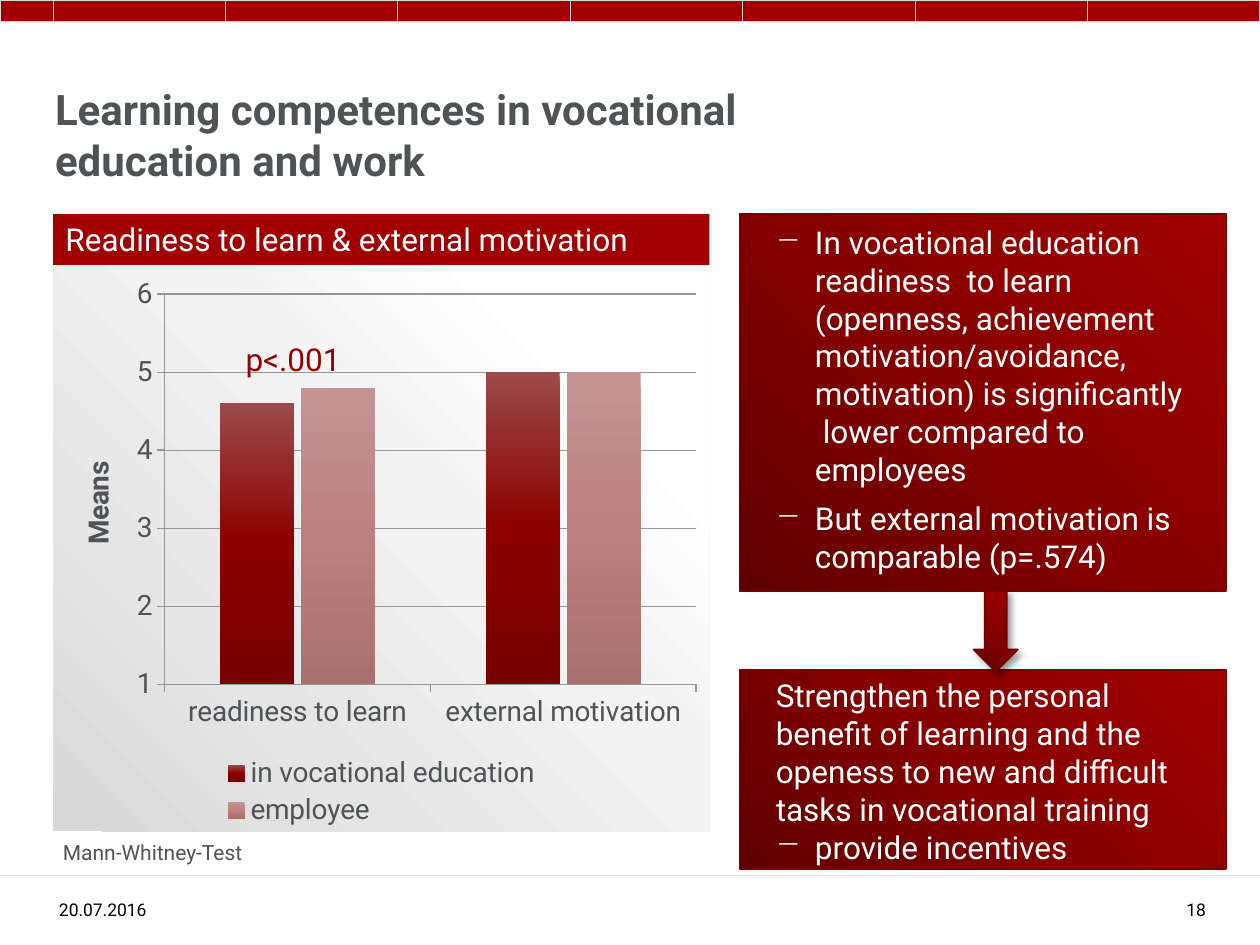
from dataclasses import dataclass

from lxml import etree
from pptx import Presentation
from pptx import util as u
from pptx.chart.data import CategoryChartData
from pptx.dml.color import RGBColor
from pptx.enum import chart as charts
from pptx.enum import shapes, text
from pptx.oxml import parse_xml
from pptx.oxml.ns import nsdecls, qn


@dataclass(frozen=True)
class Theme:
    font: str = "Roboto"
    red: str = "A00000"
    edge: str = "760000"
    accent: str = "960000"
    grey: str = "4F5355"
    white: str = "FFFFFF"
    black: str = "000000"
    separator: str = "D9D9D9"
    rule: str = "E3E4E5"
    grid: str = "969696"
    panel: tuple = ((0, "5F0000"), (50, "870000"), (100, "A00000"))
    plot: tuple = ((0, "D8D8D8"), (28, "E5E5E5"), (55, "F2F2F2"), (82, "FFFFFF"))
    bars: tuple = (
        ((0, "9C4A4A"), (50, "8C0000"), (100, "780000")),
        ((0, "C49494"), (50, "BC8080"), (100, "A87070")),
    )
    title: int = 24
    body: int = 18
    axis: int = 16
    note: int = 12
    footer: int = 10


def rgb(value):
    return RGBColor.from_string(value)


def add_gradient(properties, stops, angle):
    """Put a linear gradient into shape or chart properties."""
    marks = "".join(
        f'<a:gs pos="{pos * 1000}"><a:srgbClr val="{color}"/></a:gs>' for pos, color in stops
    )
    gradient = parse_xml(
        f'<a:gradFill {nsdecls("a")} rotWithShape="1"><a:gsLst>{marks}</a:gsLst>'
        f'<a:lin ang="{angle * 60000}" scaled="0"/></a:gradFill>'
    )
    geometry = properties.find(qn("a:prstGeom"))
    if geometry is None:
        properties.insert(0, gradient)
    else:
        geometry.addnext(gradient)


def add_layout(parent, inner=False, **box):
    """Place a chart part by fractions of the chart area."""
    for old in parent.findall(qn("c:layout")):
        parent.remove(old)
    parts = {"layoutTarget": "inner"} if inner else {}
    parts.update(xMode="edge", yMode="edge", **box)
    items = "".join(f'<c:{name} val="{value}"/>' for name, value in parts.items())
    return parse_xml(
        f'<c:layout {nsdecls("c")}><c:manualLayout>{items}</c:manualLayout></c:layout>'
    )


def write(paragraph, content, *, theme, size, color, bold=False, bullet=None, align=None):
    if bullet:
        properties = paragraph._p.get_or_add_pPr()
        properties.set("marL", str(u.Cm(0.79)))
        properties.set("indent", str(-u.Cm(0.79)))
        etree.SubElement(properties, qn("a:buChar")).set("char", bullet)
    if align is not None:
        paragraph.alignment = align
    run = paragraph.add_run()
    run.text = content
    font = run.font
    font.name, font.size, font.bold = theme.font, u.Pt(size), bold
    font.color.rgb = rgb(color)


class SlideBuilder:
    def __init__(self, slide, theme):
        self.slide, self.theme = slide, theme

    def box(self, place, *, kind=shapes.MSO_SHAPE.RECTANGLE, fill=None, line=None, width=1):
        shape = self.slide.shapes.add_shape(kind, *map(u.Cm, place))
        shape.shadow.inherit = False
        if fill:
            shape.fill.solid()
            shape.fill.fore_color.rgb = rgb(fill)
        else:
            add_gradient(shape._element.spPr, self.theme.panel, 315)
        if line:
            shape.line.color.rgb = rgb(line)
            shape.line.width = u.Pt(width)
        else:
            shape.line.fill.background()
        return shape

    def arrow(self, place):
        arrow = self.box(place, kind=shapes.MSO_SHAPE.DOWN_ARROW, line=self.theme.edge)
        effects = arrow._element.spPr.find(qn("a:effectLst"))
        effects.append(parse_xml(
            f'<a:outerShdw {nsdecls("a")} blurRad="{u.Pt(4)}" dist="{u.Pt(3)}" dir="2700000">'
            f'<a:srgbClr val="{self.theme.black}"><a:alpha val="40000"/></a:srgbClr>'
            '</a:outerShdw>'
        ))

    def rule(self, y, right):
        line = self.slide.shapes.add_connector(
            shapes.MSO_CONNECTOR.STRAIGHT, 0, u.Cm(y), u.Cm(right), u.Cm(y))
        line.line.color.rgb = rgb(self.theme.rule)
        line.line.width = u.Pt(0.5)
        etree.SubElement(line._element.spPr, qn("a:effectLst"))

    def text(self, place, *lines, anchor=text.MSO_ANCHOR.TOP, fill=None, **style):
        """Each line is a string, or a (string, bullet) pair."""
        holder = (self.box(place, fill=fill) if fill
                  else self.slide.shapes.add_textbox(*map(u.Cm, place)))
        frame = holder.text_frame
        frame.word_wrap = True
        frame.vertical_anchor = anchor
        style = {"align": text.PP_ALIGN.LEFT, **style}
        for index, line in enumerate(lines):
            content, bullet = (line, None) if isinstance(line, str) else line
            paragraph = frame.add_paragraph() if index else frame.paragraphs[0]
            write(paragraph, content, theme=self.theme, bullet=bullet, **style)

    def column_chart(self, place, categories, series, axis_title):
        theme = self.theme
        data = CategoryChartData()
        data.categories = categories
        for name, values in series.items():
            data.add_series(name, values)
        chart = self.slide.shapes.add_chart(
            charts.XL_CHART_TYPE.COLUMN_CLUSTERED, *map(u.Cm, place), data).chart
        chart.has_title = False
        chart.font.name, chart.font.size = theme.font, u.Pt(theme.axis)
        chart.font.color.rgb = rgb(theme.grey)

        # Background and plot position
        root = chart._chartSpace.find(qn("c:chart"))
        background = parse_xml(f'<c:spPr {nsdecls("c", "a")}><a:ln><a:noFill/></a:ln></c:spPr>')
        add_gradient(background, theme.plot, 315)
        root.addnext(background)
        area = root.find(qn("c:plotArea"))
        area.insert(0, add_layout(area, inner=True, x=0.17, y=0.05, w=0.81, h=0.69))

        # Columns
        plot = chart.plots[0]
        plot.gap_width, plot.overlap, plot.vary_by_categories = 150, -10, False
        for column, stops in zip(plot.series, theme.bars):
            add_gradient(column._element.get_or_add_spPr(), stops, 90)

        # Axes
        values = chart.value_axis
        values.minimum_scale, values.maximum_scale, values.major_unit = 1, 6, 1
        values.has_major_gridlines = True
        values.tick_labels.number_format = "0"
        values.tick_labels.number_format_is_linked = False
        for axis in (values, chart.category_axis):
            axis.major_tick_mark = charts.XL_TICK_MARK.OUTSIDE
        for part in (values, chart.category_axis, values.major_gridlines):
            part.format.line.color.rgb = rgb(theme.grid)
            part.format.line.width = u.Pt(0.75)
        title = values.axis_title.text_frame
        write(title.paragraphs[0], axis_title, theme=theme,
              size=theme.axis, color=theme.grey, bold=True)
        title._txBody.bodyPr.set("rot", "-5400000")
        title._txBody.bodyPr.set("vert", "horz")

        # Legend
        chart.has_legend = True
        legend = chart.legend
        legend.position = charts.XL_LEGEND_POSITION.BOTTOM
        legend.include_in_layout = False
        legend.font.size, legend.font.name = u.Pt(theme.axis), theme.font
        legend.font.color.rgb = rgb(theme.grey)
        layout = add_layout(legend._element, x=0.25, y=0.86, w=0.5, h=0.14)
        legend._element.find(qn("c:legendPos")).addnext(layout)


def main():
    theme = Theme()
    deck = Presentation()
    deck.slide_width, deck.slide_height = u.Cm(25.4), u.Cm(19.05)
    page = SlideBuilder(deck.slides.add_slide(deck.slide_layouts[6]), theme)

    # Top strip and footer rule
    margin, cells = 1.07, 7
    cell = (25.4 - margin) / cells
    strip = [(0, margin)] + [(margin + i * cell, cell) for i in range(cells)]
    for left, width in strip:
        page.box((left, 0, width, 0.43), fill=theme.red, line=theme.separator, width=0.5)
    page.rule(17.65, 25.4)

    # Title and footer
    page.text((0.86, 1.5, 17.6, 2.41), "Learning competences in vocational education and work",
              size=theme.title, color=theme.grey, bold=True, anchor=text.MSO_ANCHOR.MIDDLE)
    footer = dict(size=theme.footer, color=theme.black, anchor=text.MSO_ANCHOR.BOTTOM)
    page.text((0.94, 17.65, 2.79, 1.02), "20.07.2016", **footer)
    page.text((22.48, 17.65, 2.08, 1.02), "18", align=text.PP_ALIGN.RIGHT, **footer)

    # Chart with its heading and notes
    page.column_chart(
        (margin, 5.36, 13.23, 11.4), ["readiness to learn", "external motivation"],
        {"in vocational education": (4.6, 5), "employee": (4.8, 5)}, "Means")
    page.text((4.7, 6.73, 3, 1.02), "p<.001", size=theme.body, color=theme.accent)
    page.text((margin, 4.32, 13.23, 1.02), "Readiness to learn & external motivation",
              size=theme.body, color=theme.white, fill=theme.red)
    page.text((1.02, 16.79, 13.21, 0.76), "Mann-Whitney-Test", size=theme.note, color=theme.grey)

    # Findings and conclusion
    for top, height in ((4.32, 7.59), (13.51, 4.01)):
        page.box((14.91, top, 9.8, height), line=theme.edge)
    statements = (
        (4.37, 5.64, [("In vocational education readiness  to learn (openness, achievement "
                       "motivation/avoidance, motivation) is significantly  lower compared "
                       "to employees", "−")]),
        (9.93, 1.8, [("But external motivation is comparable (p=.574)", "−")]),
        (13.51, 4.11, ["Strengthen the personal benefit of learning and the openess to new "
                       "and difficult tasks in vocational training", ("provide incentives", "−")]),
    )
    for top, height, lines in statements:
        page.text((15.39, top, 8.79, height), *lines, size=theme.body, color=theme.white)
    page.arrow((19.63, 11.91, 0.89, 1.63))

    deck.save("out.pptx")


if __name__ == "__main__":
    main()
